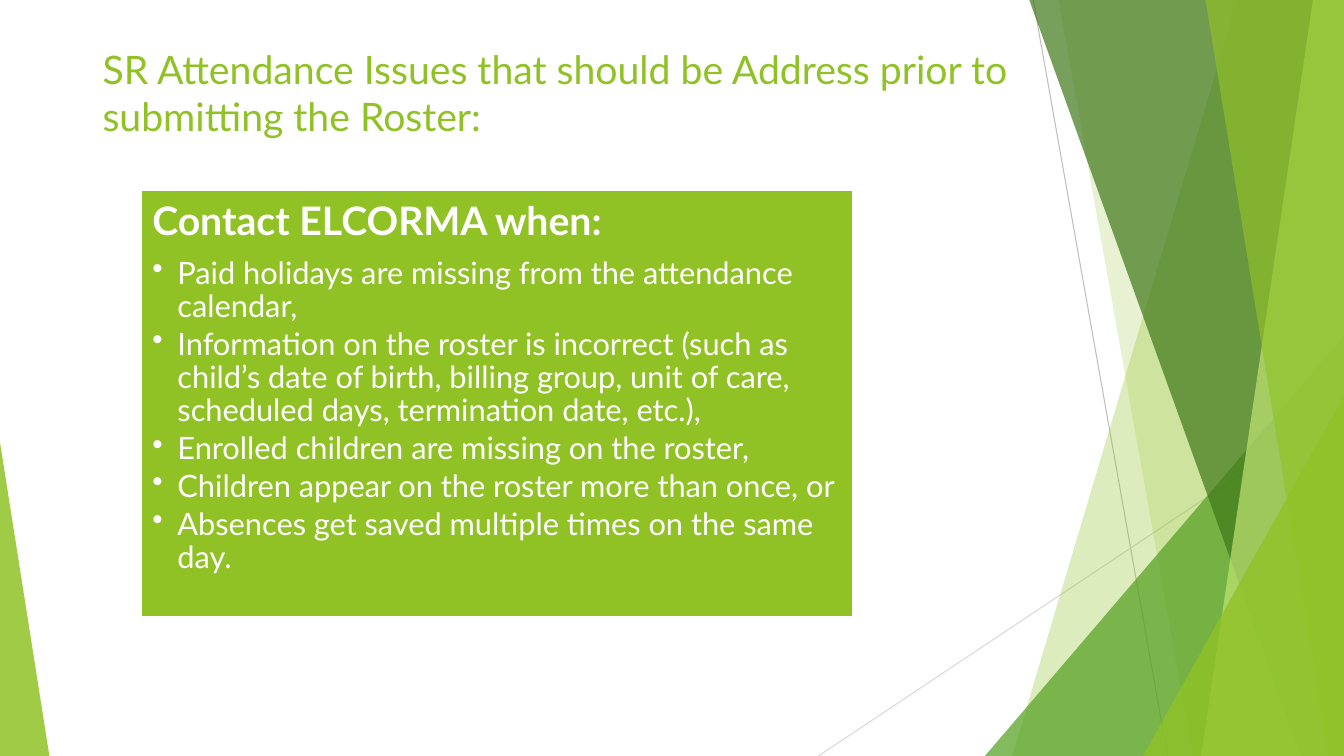
from lxml import etree
from pptx import Presentation
from pptx import util as u
from pptx.dml.color import RGBColor
from pptx.enum import shapes, text
from pptx.oxml import ns

Pt = u.Pt
LIME = RGBColor(0x90, 0xC2, 0x26)
GREEN = RGBColor(0x54, 0xA0, 0x21)
FOREST = RGBColor(0x3F, 0x78, 0x19)
PALE = RGBColor(0xC0, 0xE4, 0x74)
WHITE = RGBColor(0xFF, 0xFF, 0xFF)
GRAY = RGBColor(0xBF, 0xBF, 0xBF)
LIGHT_GRAY = RGBColor(0xD9, 0xD9, 0xD9)
WIDTH, HEIGHT, TOP = 960, 540, -0.7

ISSUES = [
    "Paid holidays are missing from the attendance calendar,",
    "Information on the roster is incorrect (such as child’s date of birth, "
    "billing group, unit of care, scheduled days, termination date, etc.),",
    "Enrolled children are missing on the roster,",
    "Children appear on the roster more than once, or",
    "Absences get saved multiple times on the same day.",
]


class Painter:
    """Draws styled elements on the current page."""

    font = "Lato"

    def __init__(self, page):
        self.page = page

    def line(self, start, end, color):
        line = self.page.shapes.add_connector(
            shapes.MSO_CONNECTOR.STRAIGHT, *(Pt(n) for n in start + end))
        line.line.color.rgb = color
        line.line.width = Pt(0.75)
        etree.SubElement(line.element.spPr, ns.qn("a:effectLst"))

    def paint(self, shape, color, opacity):
        shape.shadow.inherit = False
        shape.fill.solid()
        shape.fill.fore_color.rgb = color
        shape.line.fill.background()
        tint = shape.element.spPr.find(".//" + ns.qn("a:srgbClr"))
        etree.SubElement(tint, ns.qn("a:alpha"), val=str(opacity * 1000))

    def shard(self, top_left, bottom_left, color, opacity):
        outline = self.page.shapes.build_freeform(Pt(top_left), Pt(TOP))
        outline.add_line_segments([
            (Pt(WIDTH), Pt(TOP)), (Pt(WIDTH), Pt(HEIGHT)),
            (Pt(bottom_left), Pt(HEIGHT))], close=True)
        self.paint(outline.convert_to_shape(), color, opacity)

    def triangle(self, left, top, width, peak, color, opacity):
        shape = self.page.shapes.add_shape(
            shapes.MSO_SHAPE.ISOSCELES_TRIANGLE,
            Pt(left), Pt(top), Pt(width), Pt(HEIGHT - top))
        shape.adjustments[0] = peak
        self.paint(shape, color, opacity)

    def title(self, left, top, width, height, words):
        box = self.page.shapes.add_textbox(Pt(left), Pt(top), Pt(width), Pt(height))
        box.text_frame.word_wrap = True
        self.span(box.text_frame.paragraphs[0], words, 28, LIME)

    def panel(self, left, top, width, height, heading, items):
        box = self.page.shapes.add_shape(
            shapes.MSO_SHAPE.RECTANGLE, Pt(left), Pt(top), Pt(width), Pt(height))
        box.shadow.inherit = False
        box.fill.solid()
        box.fill.fore_color.rgb = LIME
        box.line.color.rgb = WHITE
        box.line.width = Pt(1.5)
        frame = box.text_frame
        frame.word_wrap = True
        frame.vertical_anchor = text.MSO_ANCHOR.TOP
        frame.margin_left = frame.margin_right = Pt(8.4)
        frame.margin_top = frame.margin_bottom = Pt(8.4)
        para = frame.paragraphs[0]
        self.layout(para, 9.8)
        self.span(para, heading, 28, WHITE, True)
        for item in items:
            para = frame.add_paragraph()
            para.level = 1
            self.layout(para, 3.3)
            self.bullet(para)
            self.span(para, item, 22, WHITE)

    def layout(self, para, after):
        para.alignment = text.PP_ALIGN.LEFT
        para.line_spacing = 0.9
        para.space_after = Pt(after)

    def bullet(self, para):
        props = para._p.get_or_add_pPr()
        props.set("marL", str(Pt(18)))
        props.set("indent", str(Pt(-18)))
        etree.SubElement(props, ns.qn("a:buChar"), char="•")

    def span(self, para, words, size, color, bold=False):
        span = para.add_run()
        span.text = words
        span.font.name = self.font
        span.font.size = Pt(size)
        span.font.bold = bold
        span.font.color.rgb = color


def main():
    deck = Presentation()
    deck.slide_width, deck.slide_height = Pt(WIDTH), Pt(HEIGHT)
    painter = Painter(deck.slides.add_slide(deck.slide_layouts[6]))

    painter.line((738, 0), (834, HEIGHT), GRAY)
    painter.line((WIDTH, 290), (584.6, HEIGHT), LIGHT_GRAY)
    painter.shard(884, 723, LIME, 30)
    painter.shard(756, 852, LIME, 20)
    painter.triangle(703.5, 240, 256.5, 1, GREEN, 72)
    painter.shard(735, 929.5, FOREST, 70)
    painter.shard(938, 858, PALE, 70)
    painter.shard(861, 949, LIME, 65)
    painter.triangle(816.5, 283, 143.5, 1, LIME, 80)
    painter.triangle(0, 316, 35.3, 0, LIME, 85)

    painter.title(66.2, 28.8, 690, 104.4,
                  "SR Attendance Issues that should be Address prior to submitting the Roster:")
    painter.panel(100.4, 135.5, 509, 305, "Contact ELCORMA when:", ISSUES)
    deck.save("out.pptx")


if __name__ == "__main__":
    main()
